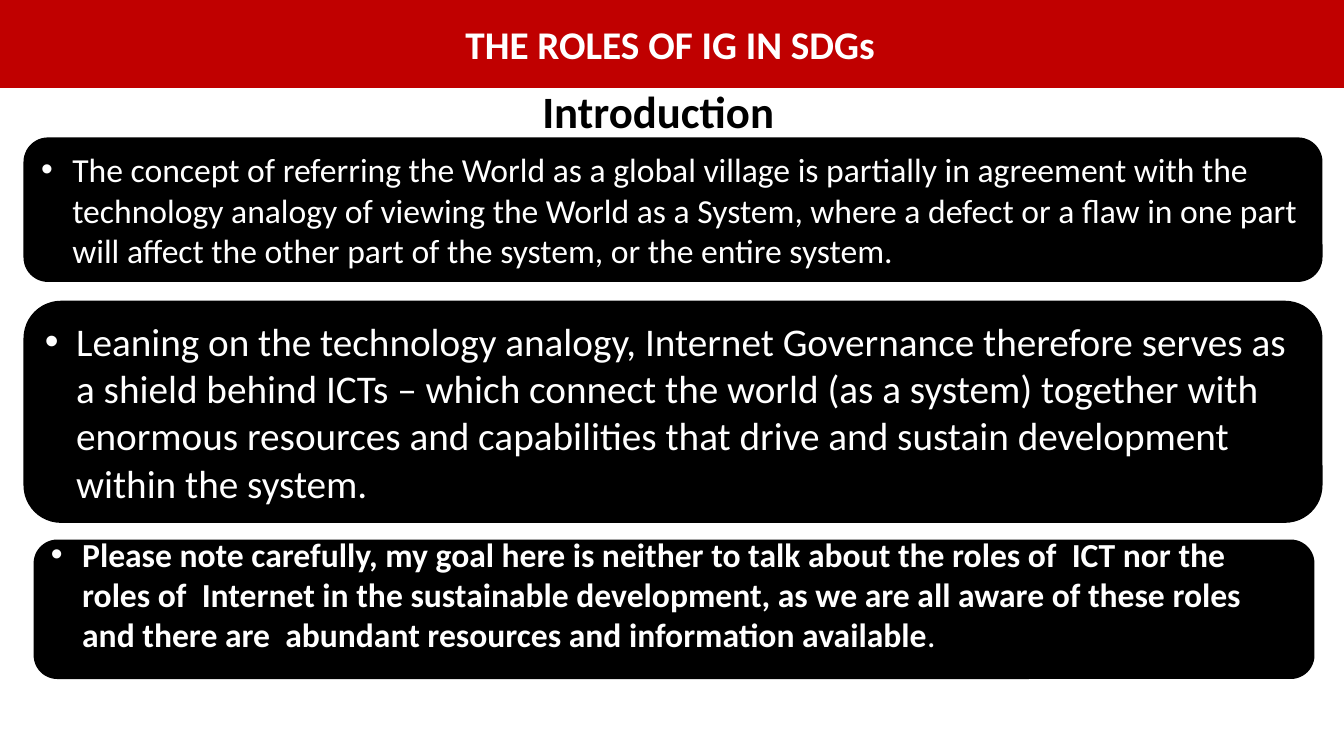
from dataclasses import dataclass

from lxml.etree import SubElement
from pptx import Presentation
from pptx.dml.color import RGBColor
from pptx.enum.shapes import MSO_SHAPE
from pptx.enum.text import MSO_ANCHOR, PP_ALIGN
from pptx.oxml.ns import qn
from pptx.slide import Slide
from pptx.text.text import TextFrame
from pptx.util import Inches, Pt

COLORS = {"banner": "C00000", "panel": "000000", "light": "FFFFFF", "dark": "000000"}
HANGING_INDENT = Inches(0.31)


@dataclass(frozen=True)
class Panel:
    left: float
    top: float
    width: float
    height: float
    text: str
    size: int
    bold: bool = False
    ending: str = ""
    color: str = "panel"
    outline: MSO_SHAPE = MSO_SHAPE.ROUNDED_RECTANGLE
    bulleted: bool = True
    bottom_inset: float = 0.05


BANNER = Panel(-0.05, 0, 13.39, 0.87, "THE ROLES OF IG IN SDGs", 28, bold=True,
               color="banner", outline=MSO_SHAPE.RECTANGLE, bulleted=False)
VILLAGE = Panel(
    0.24, 1.37, 12.87, 1.42,
    "The concept of referring the World as a global village is partially in "
    "agreement with the technology analogy of viewing the World as a System, "
    "where a defect or a flaw in one part will affect the other part of the "
    "system, or the entire system.", 24)
SHIELD = Panel(
    0.24, 2.99, 12.87, 2.19,
    "Leaning on the technology analogy, Internet Governance therefore serves as "
    "a shield behind ICTs – which connect the world (as a system) together with "
    "enormous resources and capabilities that drive and sustain development "
    "within the system.", 28)
GOAL = Panel(
    0.34, 5.36, 12.69, 1.37,
    "Please note carefully, my goal here is neither to talk about the roles of  "
    "ICT nor the roles of  Internet in the sustainable development, as we are all "
    "aware of these roles and there are  abundant resources and information "
    "available", 24, bold=True, ending=".", bottom_inset=0.35)


def rgb(name: str) -> RGBColor:
    return RGBColor.from_string(COLORS[name])


def add_words(frame: TextFrame, words: str, size: int, bold: bool, color: str) -> None:
    run = frame.paragraphs[0].add_run()
    run.text = words
    for attribute, value in {"name": "Calibri", "size": Pt(size), "bold": bold}.items():
        setattr(run.font, attribute, value)
    run.font.color.rgb = rgb(color)


def add_bullet(frame: TextFrame) -> None:
    properties = frame.paragraphs[0]._p.get_or_add_pPr()
    properties.set("marL", str(HANGING_INDENT))
    properties.set("indent", str(-HANGING_INDENT))
    SubElement(properties, qn("a:buFont"), typeface="Arial")
    SubElement(properties, qn("a:buChar"), char="•")


def draw_panel(slide: Slide, panel: Panel) -> None:
    box = slide.shapes.add_shape(
        panel.outline, Inches(panel.left), Inches(panel.top),
        Inches(panel.width), Inches(panel.height))
    box.shadow.inherit = False
    box.fill.solid()
    box.fill.fore_color.rgb = rgb(panel.color)
    box.line.color.rgb = rgb(panel.color)
    box.line.width = Pt(1)
    frame = box.text_frame
    layout = {"word_wrap": True, "vertical_anchor": MSO_ANCHOR.MIDDLE,
              "margin_bottom": Inches(panel.bottom_inset)}
    for attribute, value in layout.items():
        setattr(frame, attribute, value)
    frame.paragraphs[0].alignment = PP_ALIGN.LEFT if panel.bulleted else PP_ALIGN.CENTER
    if panel.bulleted:
        add_bullet(frame)
    add_words(frame, panel.text, panel.size, panel.bold, "light")
    if panel.ending:
        add_words(frame, panel.ending, panel.size, False, "light")


def draw_introduction(slide: Slide) -> None:
    heading = slide.shapes.add_textbox(
        Inches(2.45), Inches(0.78), Inches(8.16), Inches(0.94)).text_frame
    heading.word_wrap = True
    heading.paragraphs[0].alignment = PP_ALIGN.CENTER
    add_words(heading, "Introduction", 32, True, "dark")


def main() -> None:
    deck = Presentation()
    deck.slide_width, deck.slide_height = Inches(13.33), Inches(7.5)
    slide = deck.slides.add_slide(deck.slide_layouts[6])
    for panel in (BANNER, VILLAGE):
        draw_panel(slide, panel)
    draw_introduction(slide)
    for panel in (SHIELD, GOAL):
        draw_panel(slide, panel)
    deck.save("out.pptx")


if __name__ == "__main__":
    main()
